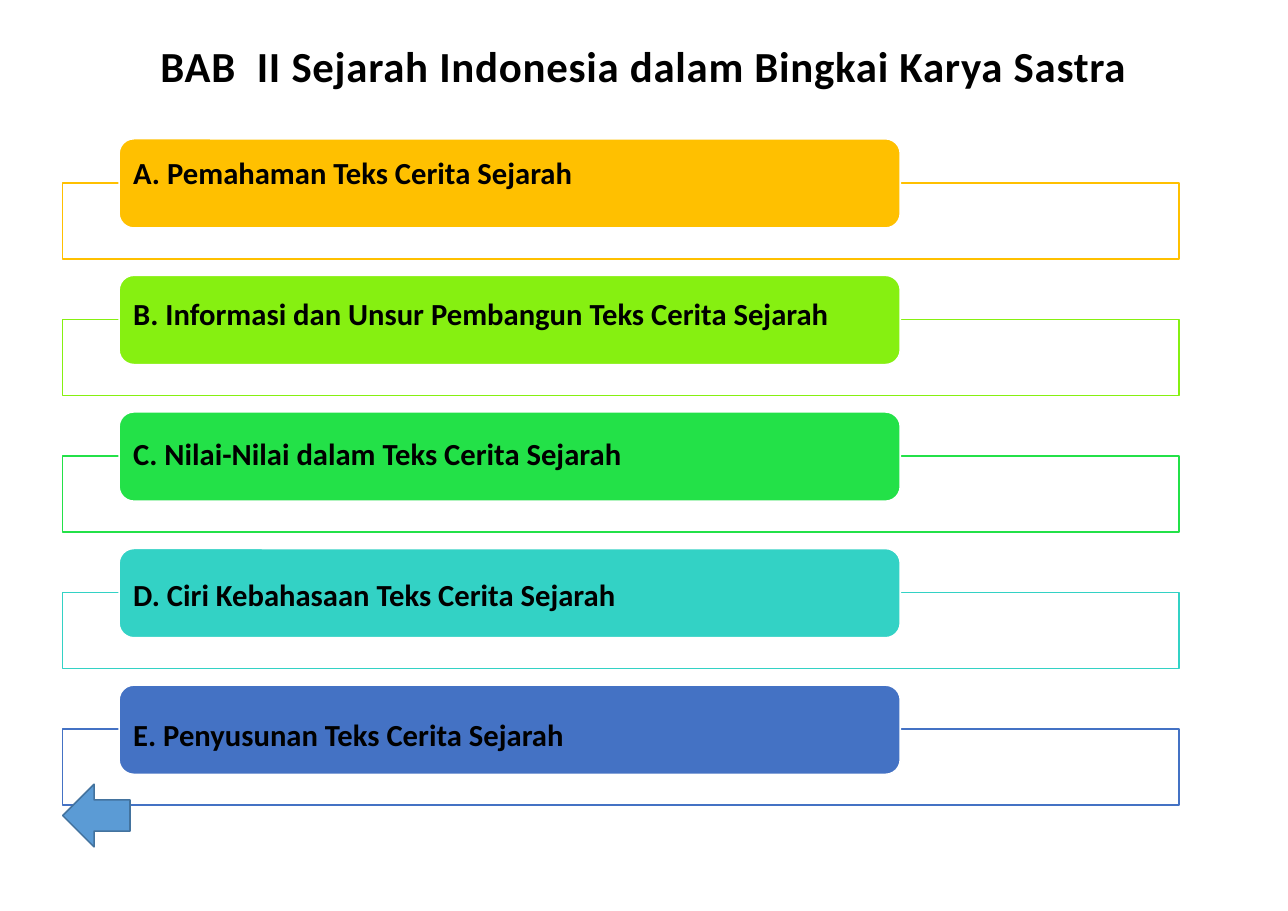
from lxml import etree
from pptx import Presentation
from pptx.dml.color import RGBColor
from pptx.enum.shapes import MSO_SHAPE
from pptx.enum.text import MSO_ANCHOR, MSO_AUTO_SIZE, PP_ALIGN
from pptx.oxml.ns import qn
from pptx.util import Pt

RECTANGLE = MSO_SHAPE.RECTANGLE
ROUNDED = MSO_SHAPE.ROUNDED_RECTANGLE
LEFT_ARROW = MSO_SHAPE.LEFT_ARROW
CENTER, LEFT = PP_ALIGN.CENTER, PP_ALIGN.LEFT
TOP = MSO_ANCHOR.TOP
FIT_SHAPE = MSO_AUTO_SIZE.SHAPE_TO_FIT_TEXT

COLORS = {
    "text": "000000", "white": "FFFFFF", "title outline": "548235",
    "amber": "FFC000", "lime": "86F011", "green": "23E148",
    "turquoise": "33D2C5", "blue": "4472C4",
    "arrow": "5B9BD5", "arrow line": "43739E",
}

SECTIONS = [
    ("A. Pemahaman Teks Cerita Sejarah", "amber"),
    ("B. Informasi dan Unsur Pembangun Teks Cerita Sejarah", "lime"),
    ("C. Nilai-Nilai dalam Teks Cerita Sejarah", "green"),
    ("D. Ciri Kebahasaan Teks Cerita Sejarah", "turquoise"),
    ("E. Penyusunan Teks Cerita Sejarah", "blue"),
]


class SlideBuilder:
    font_name = "Calibri"

    def __init__(self, slide):
        self.slide = slide

    def color(self, name):
        return RGBColor.from_string(COLORS[name])

    def set_text(self, shape, text, size, alignment, wrap):
        frame = shape.text_frame
        frame.text = text
        frame.word_wrap = wrap
        frame.auto_size = FIT_SHAPE
        frame.vertical_anchor = TOP
        paragraph = frame.paragraphs[0]
        paragraph.alignment = alignment
        font = paragraph.runs[0].font
        font.name, font.size, font.bold = self.font_name, Pt(size), True
        font.color.rgb = self.color("text")
        return paragraph.runs[0]

    def title(self, text, left, top, width, height):
        shape = self.slide.shapes.title
        shape.left, shape.top = Pt(left), Pt(top)
        shape.width, shape.height = Pt(width), Pt(height)
        run = self.set_text(shape, text, 28, CENTER, False)
        # Letter spacing and a thin outline
        properties = run._r.get_or_add_rPr()
        properties.set("spc", "50")
        outline = etree.Element(qn("a:ln"), w=str(int(Pt(0.9))))
        fill = etree.SubElement(outline, qn("a:solidFill"))
        etree.SubElement(fill, qn("a:srgbClr"), val=COLORS["title outline"])
        properties.insert(0, outline)

    def label(self, text, left, top, width, height):
        shape = self.slide.shapes.add_textbox(
            Pt(left), Pt(top), Pt(width), Pt(height))
        self.set_text(shape, text, 20, LEFT, True)

    def shape(self, kind, left, top, width, height, fill, line, opacity=100):
        shape = self.slide.shapes.add_shape(
            kind, Pt(left), Pt(top), Pt(width), Pt(height))
        shape.shadow.inherit = False
        shape.fill.solid()
        shape.fill.fore_color.rgb = self.color(fill)
        shape.line.color.rgb = self.color(line)
        shape.line.width = Pt(1)
        if opacity < 100:
            color = shape._element.spPr.find(qn("a:solidFill"))[0]
            etree.SubElement(color, qn("a:alpha"), val=str(opacity * 1000))


def main():
    presentation = Presentation()
    presentation.slide_width, presentation.slide_height = Pt(841.68), Pt(595.44)
    slide = presentation.slides.add_slide(presentation.slide_layouts[5])
    builder = SlideBuilder(slide)

    # Title
    builder.title("BAB  II Sejarah Indonesia dalam Bingkai Karya Sastra",
                  96.5, 22.3, 648.7, 41.8)

    # Section frames and coloured bars
    bar_step = 89.28
    for index, (_, color) in enumerate(SECTIONS):
        offset = index * bar_step
        builder.shape(RECTANGLE, 41, 119.5 + offset, 729.4, 49.7,
                      "white", color, opacity=90)
        builder.shape(ROUNDED, 77.8, 90.7 + offset, 510.5, 58.3,
                      color, "white")

    # Section names, spaced slightly wider than the bars
    name_step = 91.8
    for index, (name, _) in enumerate(SECTIONS):
        builder.label(name, 80, 97.2 + index * name_step, 510, 31.5)

    # Back arrow
    builder.shape(LEFT_ARROW, 41, 512.6, 44, 41, "arrow", "arrow line")

    presentation.save("out.pptx")


if __name__ == "__main__":
    main()
